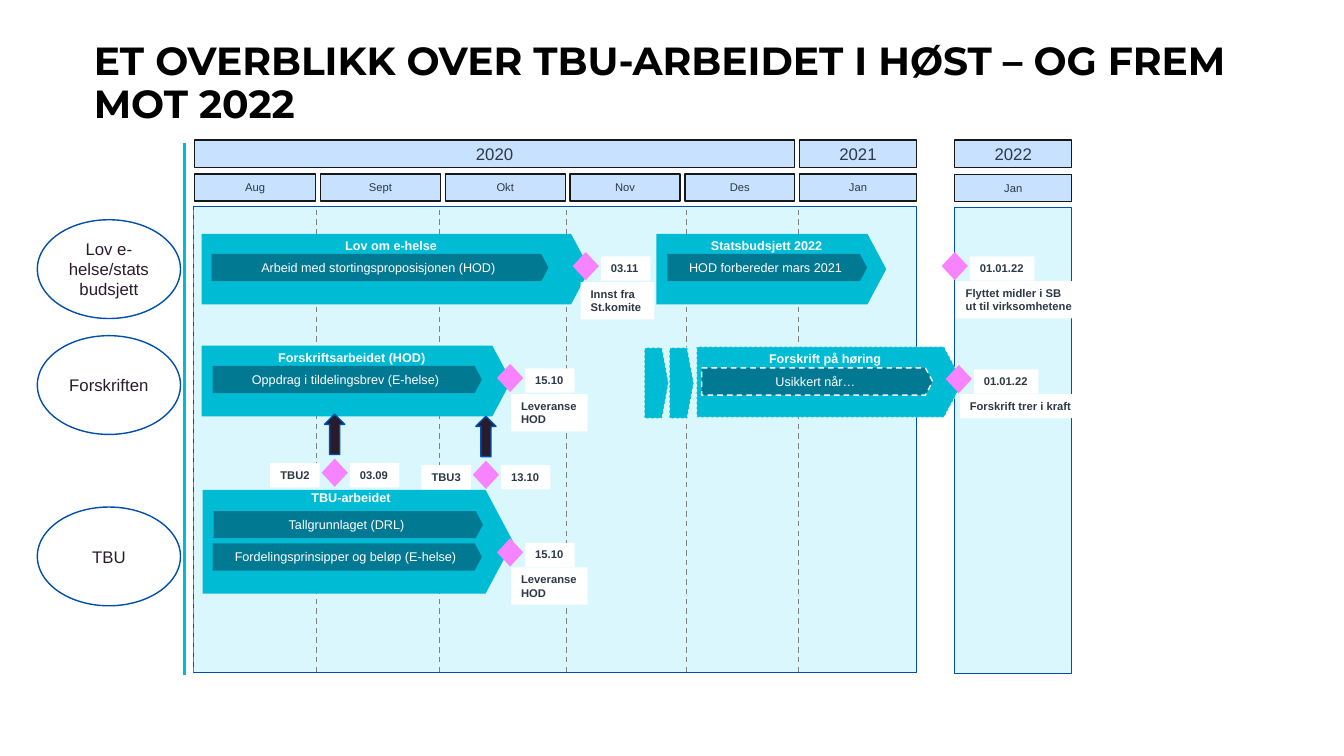
from dataclasses import dataclass

from lxml.etree import SubElement
from pptx import Presentation
from pptx.dml.color import RGBColor
from pptx.enum.dml import MSO_LINE
from pptx.enum.shapes import MSO_CONNECTOR, MSO_SHAPE
from pptx.enum.text import MSO_ANCHOR, MSO_AUTO_SIZE, PP_ALIGN
from pptx.oxml.ns import qn
from pptx.util import Inches, Pt


@dataclass(frozen=True)
class Theme:
    white: str = "FFFFFF"
    black: str = "000000"
    ink: str = "2C3845"
    dark: str = "281C2C"
    edge: str = "181818"
    head: str = "C8E1FF"
    pale: str = "B8F1FE"
    blue: str = "014EAC"
    cyan: str = "00BBD4"
    teal: str = "027993"
    pink: str = "F783FF"
    gray: str = "808080"
    font: str = "Arial"
    display: str = "Montserrat"
    title: int = 28
    large: int = 12
    body: int = 9
    small: int = 8


T = Theme()
WIDE, HIGH = Inches(13.33), Inches(7.5)
COLS, ROWS = 133.3, 75
MONTHS = [("Aug", 12), ("Sept", 11.9), ("Okt", 11.9),
          ("Nov", 10.9), ("Des", 10.9), ("Jan", 11.6)]
START, GAP, NEXT, LAST = 19.3, 0.48, 94.7, 11.6
RULES = [19.2, 31.4, 43.6, 56.2, 68.1, 79.2]


def col(n):
    return round(WIDE * n / COLS)


def row(n):
    return round(HIGH * n / ROWS)


def write(frame, text, size=T.body, color=T.white, bold=False, font=T.font,
          align=PP_ALIGN.CENTER, anchor=MSO_ANCHOR.MIDDLE, wrap=True,
          fit=MSO_AUTO_SIZE.NONE, top=0.5, space=None):
    frame.text = text
    frame.word_wrap = wrap
    frame.auto_size = fit
    frame.vertical_anchor = anchor
    frame.margin_top = row(top)
    for para in frame.paragraphs:
        para.alignment = align
        para.line_spacing = space
        for run in para.runs:
            run.font.size = Pt(size)
            run.font.name = font
            run.font.bold = bold
            run.font.color.rgb = RGBColor.from_string(color)


def stroke(line, color, width, dash=False):
    line.color.rgb = RGBColor.from_string(color)
    line.width = Pt(width)
    if dash:
        line.dash_style = MSO_LINE.DASH


def shape(slide, kind, x, y, w, h, fill, line=None, width=1, dash=False):
    item = slide.shapes.add_shape(kind, col(x), row(y), col(w), row(h))
    item.shadow.inherit = False
    item.fill.solid()
    item.fill.fore_color.rgb = RGBColor.from_string(fill)
    if line:
        stroke(item.line, line, width, dash)
    else:
        item.line.fill.background()
    return item


def rule(slide, x, y, end, color, width, dash=False):
    item = slide.shapes.add_connector(
        MSO_CONNECTOR.STRAIGHT, col(x), row(y), col(x), row(end))
    stroke(item.line, color, width, dash)
    SubElement(item._element.spPr, qn("a:effectLst"))


def panel(slide, x, y, w):
    item = shape(slide, MSO_SHAPE.RECTANGLE, x, y, w, 46.2, T.pale, T.blue)
    tint = item.fill._xPr.find(qn("a:solidFill"))[0]
    SubElement(tint, qn("a:alpha"), val="50000")


def head(slide, text, x, y, w, size):
    item = shape(slide, MSO_SHAPE.RECTANGLE, x, y, w, 2.7, T.head, T.edge)
    write(item.text_frame, text, size=size, color=T.ink)


def plate(slide, x, y, w, h, fill, width=None):
    item = shape(slide, MSO_SHAPE.PENTAGON, x, y, w, h, fill,
                 T.white if width else None, width or 1, bool(width))
    item.adjustments[0] = 0.266
    return item


def phase(slide, text, x, y, w, h=7, top=0.4, width=None):
    item = plate(slide, x, y, w, h, T.cyan, width)
    write(item.text_frame, text, bold=True, anchor=MSO_ANCHOR.TOP, top=top)


def task(slide, text, x, y, w, width=None):
    write(plate(slide, x, y, w, 2.7, T.teal, width).text_frame, text)


def label(slide, text, x, y, w, h=2.4, align=PP_ALIGN.LEFT, wrap=False):
    item = shape(slide, MSO_SHAPE.RECTANGLE, x, y, w, h, T.white)
    write(item.text_frame, text, size=T.small, color=T.ink, bold=True,
          align=align, anchor=MSO_ANCHOR.TOP, wrap=wrap,
          fit=MSO_AUTO_SIZE.SHAPE_TO_FIT_TEXT)


def mark(slide, date, x, y, w=4.9, tag=None):
    if tag:
        label(slide, tag, x - 5.1, y + 0.45, 4.9, align=PP_ALIGN.RIGHT)
    shape(slide, MSO_SHAPE.FLOWCHART_DECISION, x, y, 2.6, 2.8, T.pink)
    label(slide, date, x + 2.8, y + 0.45, w)


def topic(slide, text, y):
    item = shape(slide, MSO_SHAPE.OVAL, 3.7, y, 14.2, 9.8, T.white, T.blue)
    write(item.text_frame, text, size=T.large, color=T.dark)


def calendar(slide):
    panel(slide, 19.2, 20.5, 71.7)
    for x in RULES:
        rule(slide, x, 20.8, 67, T.gray, 1, dash=True)
    rule(slide, 18.3, 14.2, 67, T.cyan, 1.5)
    x = START
    for name, w in MONTHS:
        head(slide, name, x, 17.25, w, T.small)
        x += w + GAP
    jan = x - GAP - LAST
    head(slide, "2020", START, 13.9, jan - GAP - START, T.large)
    head(slide, "2021", jan, 13.9, LAST, T.large)
    head(slide, "2022", NEXT, 13.9, LAST, T.large)
    head(slide, "Jan", NEXT, 17.3, LAST, T.small)
    panel(slide, NEXT, 20.6, LAST)


def law(slide):
    topic(slide, "Lov e-helse/statsbudsjett", 21.8)
    phase(slide, "Lov om e-helse", 20, 23.2, 38.5)
    task(slide, "Arbeid med stortingsproposisjonen (HOD)", 21, 25.2, 33.4)
    label(slide, "Innst fra St.komite", 57.6, 28, 7.3, 3.7, wrap=True)
    mark(slide, "03.11", 56.8, 25)
    phase(slide, "Statsbudsjett 2022", 65.1, 23.2, 22.8)
    task(slide, "HOD forbereder mars 2021", 66.2, 25.2, 19.8)
    label(slide, "Flyttet midler i SB\nut til virksomhetene", 94.8, 27.9, 12.7, 3.7)
    mark(slide, "01.01.22", 93.4, 25, 6.4)


def order(slide):
    topic(slide, "Forskriften", 33.3)
    phase(slide, "Forskriftsarbeidet (HOD)", 20, 34.3, 30.7)
    task(slide, "Oppdrag i tildelingsbrev (E-helse)", 21.1, 36.3, 26.7)
    label(slide, "Leveranse\nHOD", 50.7, 39.1, 7.6, 3.7)
    mark(slide, "15.10", 49.3, 36.1)
    for x in (63.9, 66.4):
        plate(slide, x, 34.5, 2.4, 7, T.cyan, 0.5)
    phase(slide, "Forskrift på høring", 69.1, 34.4, 26.4, width=0.5)
    task(slide, "Usikkert når…", 69.6, 36.5, 22.9, width=1)
    label(slide, "Forskrift trer i kraft", 95.2, 39.1, 12.2)
    mark(slide, "01.01.22", 93.8, 36.2, 6.4)


def budget(slide):
    topic(slide, "TBU", 50.3)
    phase(slide, "TBU-arbeidet", 20.1, 48.6, 30.8, 10.3, top=0)
    task(slide, "Tallgrunnlaget (DRL)", 21.2, 50.7, 26.7)
    task(slide, "Fordelingsprinsipper og beløp (E-helse)", 21.1, 53.9, 26.7)
    label(slide, "Leveranse\nHOD", 50.7, 56.3, 7.6, 3.7)
    mark(slide, "15.10", 49.3, 53.4)
    for tag, date, x, y in (("TBU2", "03.09", 31.9, 45.5),
                            ("TBU3", "13.10", 46.9, 45.7)):
        mark(slide, date, x, y, tag=tag)
        shape(slide, MSO_SHAPE.UP_ARROW, x + 0.3, y - 4.4, 2, 4, T.dark, T.blue)


def main():
    deck = Presentation()
    deck.slide_width, deck.slide_height = WIDE, HIGH
    slide = deck.slides.add_slide(deck.slide_layouts[5])
    title = slide.shapes.title
    title.left, title.top = col(8.5), row(2.9)
    title.width, title.height = col(116.8), row(10.1)
    frame = title.text_frame
    frame.margin_left = frame.margin_right = col(0.8)
    frame.margin_bottom = row(0.4)
    write(frame, "ET OVERBLIKK OVER TBU-ARBEIDET I HØST – OG FREM MOT 2022",
          size=T.title, color=T.black, bold=True, font=T.display,
          align=PP_ALIGN.LEFT, top=1.2, space=0.9)
    calendar(slide)
    law(slide)
    order(slide)
    budget(slide)
    deck.save("out.pptx")


if __name__ == "__main__":
    main()
